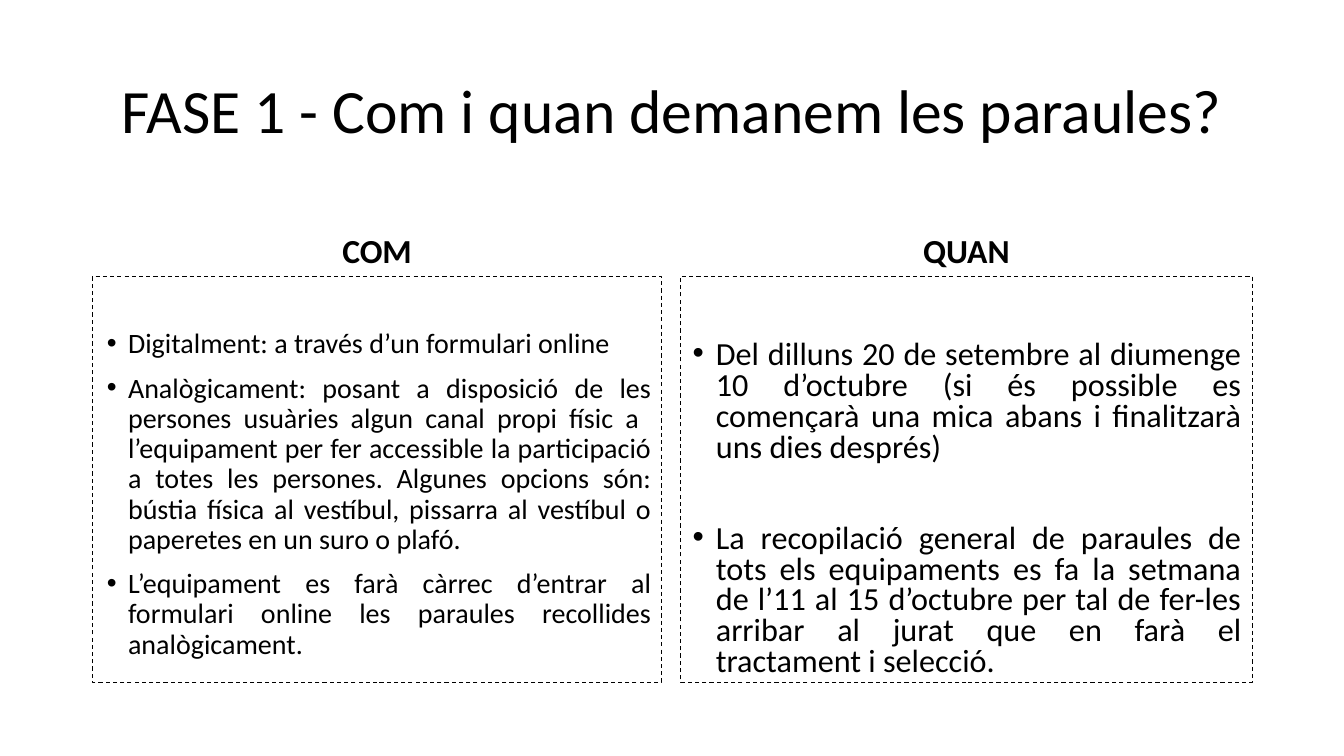
import pptx
import pptx.util
import pptx.dml.color
import pptx.enum.dml
import pptx.enum.text
import pptx.oxml.ns
import lxml.etree

Inches = pptx.util.Inches
Pt = pptx.util.Pt
Align = pptx.enum.text.PP_ALIGN
Anchor = pptx.enum.text.MSO_ANCHOR

COMPARISON_LAYOUT = 4
HEADING_TOP, HEADING_HEIGHT = 1.84, 0.9
LIST_TOP, LIST_HEIGHT = 2.74, 4.03


def color(value):
    return pptx.dml.color.RGBColor.from_string(value)


class SlideBuilder:
    font = "Calibri"
    ink = "000000"

    def __init__(self, page):
        self.page = page

    def place(self, index, bounds, anchor):
        """Move a template placeholder and return it."""
        box = self.page.placeholders[index]
        box.left, box.top, box.width, box.height = map(Inches, bounds)
        frame = box.text_frame
        frame.word_wrap = True
        frame.auto_size = pptx.enum.text.MSO_AUTO_SIZE.NONE
        frame.vertical_anchor = anchor
        return box

    def style(self, para, size, align, spacing=0.9, bold=False):
        para.alignment = align
        para.line_spacing = spacing
        para.space_before = Pt(0)
        para.font.name = self.font
        para.font.size = Pt(size)
        para.font.bold = bold
        para.font.color.rgb = color(self.ink)

    def heading(self, index, text, bounds, size, anchor, bold=False):
        box = self.place(index, bounds, anchor)
        box.text_frame.text = text
        self.style(box.text_frame.paragraphs[0], size, Align.CENTER, bold=bold)

    def bullet(self, para, hanging):
        props = para._p.get_or_add_pPr()
        props.set("marL", str(Inches(0.25)))
        props.set("indent", str(-Inches(hanging)))
        mark = lxml.etree.SubElement(props, pptx.oxml.ns.qn("a:buChar"))
        mark.set("char", "•")

    def bullet_list(self, index, items, bounds, size, spacing, hanging, inset, gap):
        box = self.place(index, bounds, Anchor.TOP)
        box.line.color.rgb = color(self.ink)
        box.line.width = Pt(0.75)
        box.line.dash_style = pptx.enum.dml.MSO_LINE.DASH
        frame = box.text_frame
        frame.margin_top = Inches(inset)
        frame.text = "\n".join(items)
        for number, para in enumerate(frame.paragraphs):
            self.bullet(para, hanging)
            self.style(para, size, Align.JUSTIFY, spacing)
            if number:
                para.space_before = Pt(gap)


def main():
    deck = pptx.Presentation()
    deck.slide_width, deck.slide_height = Inches(13.33), Inches(7.5)
    page = deck.slides.add_slide(deck.slide_layouts[COMPARISON_LAYOUT])
    builder = SlideBuilder(page)

    # Title
    builder.heading(0, "FASE 1 - Com i quan demanem les paraules?",
                    (0.92, 0.4, 11.5, 1.45), 44, Anchor.MIDDLE)

    # Two columns: a heading above a dashed list box
    how = [
        "Digitalment: a través d’un formulari online",
        "Analògicament: posant a disposició de les persones usuàries algun canal "
        "propi físic a  l’equipament per fer accessible la participació a totes les "
        "persones. Algunes opcions són: bústia física al vestíbul, pissarra al "
        "vestíbul o paperetes en un suro o plafó.",
        "L’equipament es farà càrrec d’entrar al formulari online les paraules "
        "recollides analògicament.",
    ]
    when = [
        "Del dilluns 20 de setembre al diumenge 10 d’octubre (si és possible es "
        "començarà una mica abans i finalitzarà uns dies després)",
        "La recopilació general de paraules de tots els equipaments es fa la setmana "
        "de l’11 al 15 d’octubre per tal de fer-les arribar al jurat que en farà el "
        "tractament i selecció.",
    ]
    columns = [
        (1, "COM", 0.92, 5.64, how,
         dict(size=20, spacing=0.9, hanging=0.21, inset=0.53, gap=10)),
        (3, "QUAN", 6.75, 5.67, when,
         dict(size=23, spacing=0.8, hanging=0.23, inset=0.64, gap=43)),
    ]
    for index, name, left, width, items, look in columns:
        builder.heading(index, name, (left, HEADING_TOP, width, HEADING_HEIGHT),
                        24, Anchor.BOTTOM, bold=True)
        builder.bullet_list(index + 1, items,
                            (left, LIST_TOP, width, LIST_HEIGHT), **look)

    # Footer placeholders are not carried over by add_slide
    deck.save("out.pptx")


if __name__ == "__main__":
    main()
